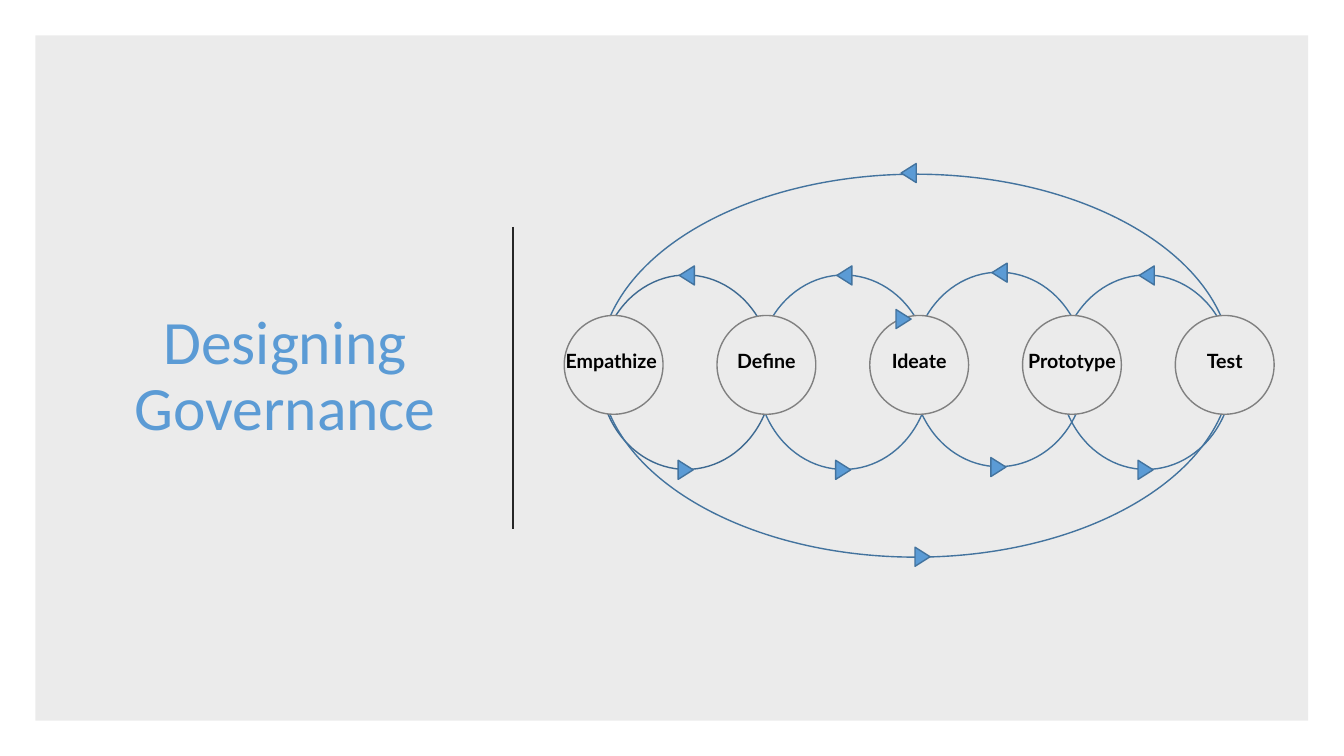
from lxml import etree
from pptx import Presentation
from pptx.dml.color import RGBColor
from pptx.enum.shapes import MSO_CONNECTOR, MSO_SHAPE
from pptx.enum.text import MSO_ANCHOR, PP_ALIGN
from pptx.oxml.ns import qn
from pptx.util import Cm, Pt

ELLIPSE = MSO_SHAPE.OVAL
RECTANGLE = MSO_SHAPE.RECTANGLE
TRIANGLE = MSO_SHAPE.ISOSCELES_TRIANGLE
STRAIGHT = MSO_CONNECTOR.STRAIGHT
MIDDLE = MSO_ANCHOR.MIDDLE
CENTER = PP_ALIGN.CENTER

COLORS = {
    "blue": "5B9BD5",
    "dark_blue": "43739E",
    "stage": "EBEBEB",
    "stage_edge": "808080",
    "divider": "262626",
    "black": "000000",
}
COLORS = {name: RGBColor.from_string(value) for name, value in COLORS.items()}

deck = Presentation()
deck.slide_width, deck.slide_height = Cm(33.87), Cm(19.05)
page = deck.slides.add_slide(deck.slide_layouts[6])


def add_figure(kind, left, top, width, height, fill=None, line=None, rotation=0):
    """Add a preset shape; without a colour, its fill or line is left off."""
    figure = page.shapes.add_shape(kind, Cm(left), Cm(top), Cm(width), Cm(height))
    figure.shadow.inherit = False
    figure.rotation = rotation
    if fill:
        figure.fill.solid()
        figure.fill.fore_color.rgb = COLORS[fill]
    else:
        figure.fill.background()
    if line:
        figure.line.color.rgb = COLORS[line]
        figure.line.width = Pt(1)
    else:
        figure.line.fill.background()
    return figure


def add_label(text, left, top, width, height, color, paragraph_format, font_format):
    box = page.shapes.add_textbox(Cm(left), Cm(top), Cm(width), Cm(height))
    box.text_frame.word_wrap = True
    box.text_frame.vertical_anchor = MIDDLE
    para = box.text_frame.paragraphs[0]
    span = para.add_run()
    span.text = text
    span.font.color.rgb = COLORS[color]
    for target, values in ((para, paragraph_format), (span.font, font_format)):
        for name, value in values.items():
            setattr(target, name, value)


# Arcs between neighbouring stages, with the first one behind the panel
ARROW = {"width": 0.48, "height": 0.38, "fill": "blue", "line": "dark_blue"}
LEFTWARD, RIGHTWARD = 270, 90
arcs = [(15.11, 6.93), (19.08, 6.93), (22.99, 6.86), (26.7, 6.93)]
for number, (left, top) in enumerate(arcs):
    add_figure(ELLIPSE, left, top, 4.37, 4.9, line="dark_blue")
    if number == 0:
        panel = add_figure(RECTANGLE, 0.89, 0.89, 32.08, 17.27, fill="black")
        panel_color = panel.fill._xPr.find(qn("a:solidFill"))[0]
        etree.SubElement(panel_color, qn("a:alpha"), val="8000")
    add_figure(TRIANGLE, left + 1.96, top - 0.18, rotation=LEFTWARD, **ARROW)
    add_figure(TRIANGLE, left + 1.93, top + 4.72, rotation=RIGHTWARD, **ARROW)

# Title and divider
add_label("Designing Governance", 2.34, 2.67, 9.7, 13.69, "blue",
          {"alignment": CENTER, "line_spacing": 0.9},
          {"name": "Calibri", "size": Pt(44)})
divider = page.shapes.add_connector(STRAIGHT, Cm(12.93), Cm(5.72), Cm(12.93), Cm(13.34))
divider.line.color.rgb = COLORS["divider"]
divider.line.width = Pt(1.5)
etree.SubElement(divider._element.spPr, qn("a:effectLst"))

# Outer loop from the last stage to the first
add_figure(ELLIPSE, 15.11, 4.39, 15.93, 9.65, line="dark_blue")
add_figure(TRIANGLE, 22.66, 4.17, rotation=LEFTWARD, **ARROW)

# Stages
STAGE_STEP = 3.85
stages = ["Empathize ", "Define", "Ideate", "Prototype", "Test"]
for number in range(len(stages)):
    add_figure(ELLIPSE, 14.22 + number * STAGE_STEP, 7.95, 2.49, 2.49,
               fill="stage", line="stage_edge")
for number, stage in enumerate(stages):
    add_label(stage, 13.28 + number * STAGE_STEP, 8.41, 4.37, 1.42, "black",
              {"alignment": CENTER, "line_spacing": 0.9, "space_before": Pt(10)},
              {"name": "Lato", "size": Pt(14), "bold": True})

# Arrowheads in front of the stages
for left, top in ((22.53, 7.85), (23.01, 13.84)):
    add_figure(TRIANGLE, left, top, rotation=RIGHTWARD, **ARROW)

deck.save("out.pptx")
